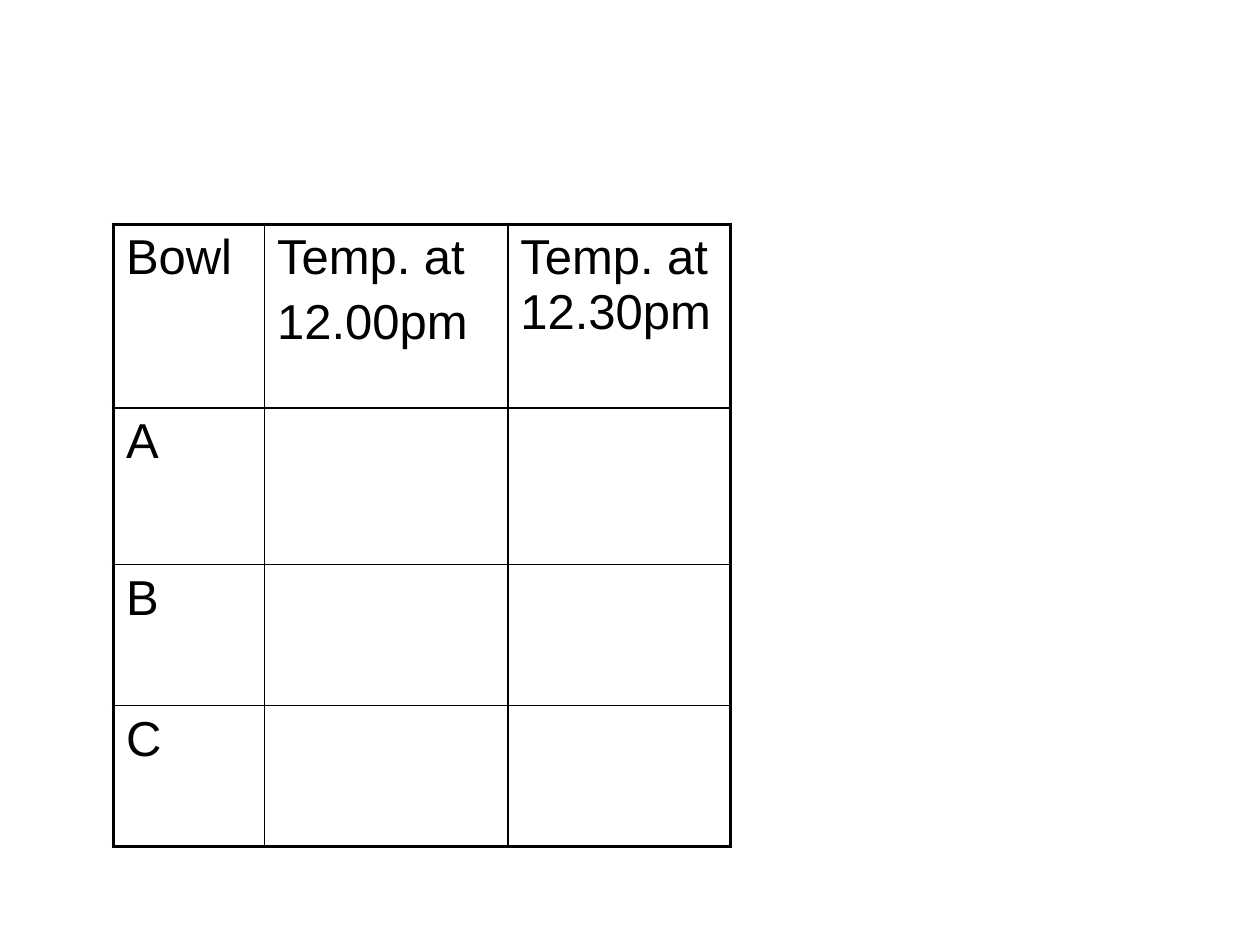
"""Build a slide with an empty table for bowl temperatures at two times."""
from lxml.etree import SubElement
from pptx import Presentation
from pptx.dml.color import RGBColor
from pptx.oxml.ns import qn
from pptx.util import Inches, Pt


def rgb(value):
    return RGBColor.from_string(value)


def add_border(cell, side, width, color):
    ln = SubElement(cell._tc.get_or_add_tcPr(), qn(f"a:ln{side}"), w=str(Pt(width)))
    fill = SubElement(ln, qn("a:solidFill"))
    SubElement(fill, qn("a:srgbClr"), val=color)


BLACK = "000000"
THIN, THICK = 1, 2.25
col_widths = [1.2, 1.93, 1.77]
row_heights = [1.46, 1.24, 1.12, 1.12]
rows = [
    [["Bowl"], ["Temp. at", "12.00pm"], ["Temp. at 12.30pm"]],
    [["A"], [], []],
    [["B"], [], []],
    [["C"], [], []],
]

prs = Presentation()
prs.slide_width, prs.slide_height = Inches(10), Inches(7.5)
s = prs.slides.add_slide(prs.slide_layouts[6])

n_rows, n_cols = len(row_heights), len(col_widths)
table = s.shapes.add_table(
    n_rows, n_cols, Inches(0.9), Inches(1.78),
    Inches(sum(col_widths)), Inches(sum(row_heights)),
).table
table.first_row = False
table.horz_banding = False
for col, width in zip(table.columns, col_widths):
    col.width = Inches(width)
for row, height in zip(table.rows, row_heights):
    row.height = Inches(height)

for i, row in enumerate(rows):
    for j, lines in enumerate(row):
        cell = table.cell(i, j)
        outer = {"L": j == 0, "R": j == n_cols - 1, "T": i == 0, "B": i == n_rows - 1}
        for side, is_outer in outer.items():
            add_border(cell, side, THICK if is_outer else THIN, BLACK)
        cell.fill.background()
        tf = cell.text_frame
        for k, line in enumerate(lines):
            p = tf.add_paragraph() if k else tf.paragraphs[0]
            if k:
                p.space_before = Pt(5.6)
            r = p.add_run()
            r.text = line
            r.font.name = "Arial"
            r.font.size = Pt(28)
            r.font.color.rgb = rgb(BLACK)

prs.save("out.pptx")
